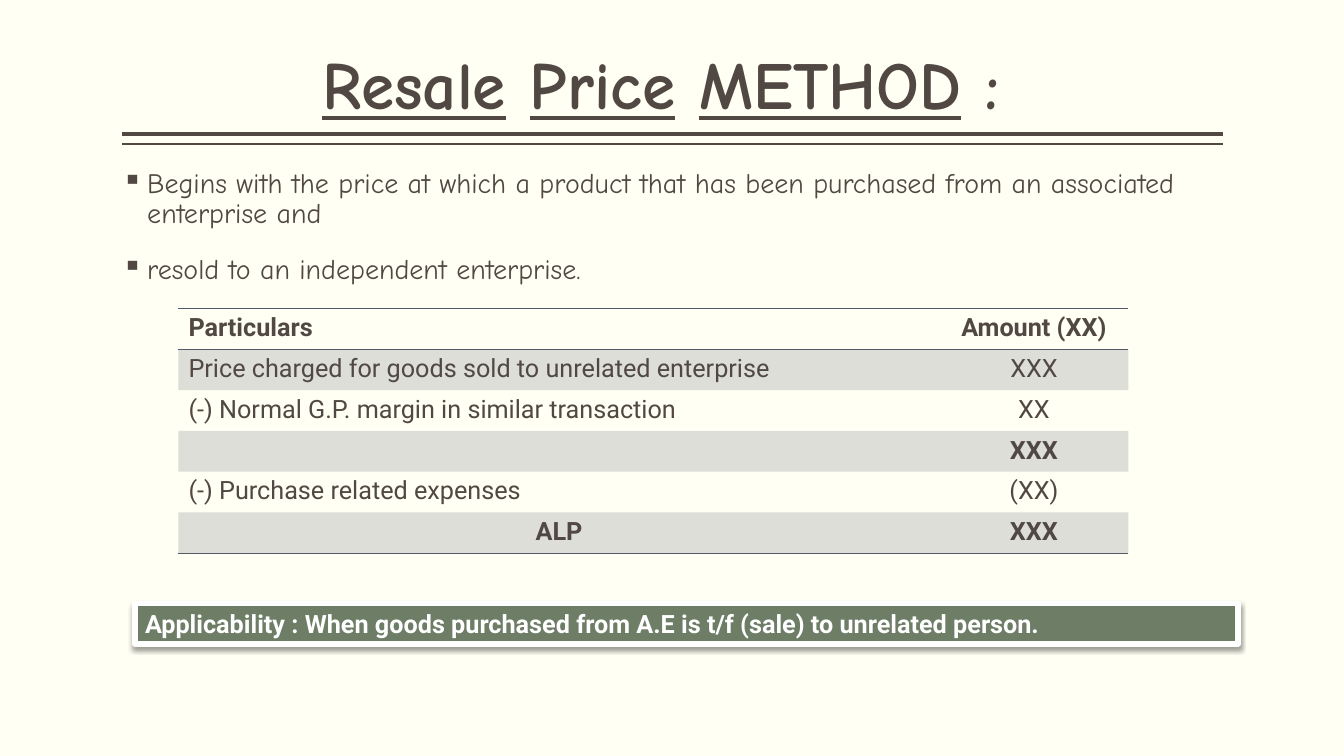
from dataclasses import dataclass

from lxml.etree import SubElement
from pptx import Presentation
from pptx.dml.color import RGBColor
from pptx.enum.shapes import MSO_CONNECTOR as Connector, MSO_SHAPE as Shape
from pptx.enum.text import MSO_ANCHOR as Anchor, MSO_AUTO_SIZE as AutoSize, PP_ALIGN as Align
from pptx.oxml.ns import qn
from pptx.util import Inches, Pt


@dataclass(frozen=True)
class Theme:
    paper: str = "FFFFF3"
    ink: str = "514843"
    slate: str = "525A6A"
    moss: str = "6D7D66"
    white: str = "FFFFFF"
    black: str = "000000"
    hand: str = "Comic Neue"
    sans: str = "Roboto"
    title_size: int = 48
    body_size: int = 20
    small_size: int = 18
    plain_table: str = "{2D5ABB26-0587-4C30-8999-92F81FD0307C}"


def rgb(code):
    return RGBColor.from_string(code)


def apply(target, formats):
    for key, value in formats.items():
        setattr(target, key, value)


def add_xml(parent, tag, **attributes):
    return SubElement(parent, qn(tag), {key: str(value) for key, value in attributes.items()})


class SlideBuilder:
    def __init__(self, theme):
        self.theme = theme
        self.deck = Presentation()
        apply(self.deck, {"slide_width": Inches(13.33), "slide_height": Inches(7.5)})
        self.slide = self.deck.slides.add_slide(self.deck.slide_layouts[6])
        self.slide.background.fill.solid()
        self.slide.background.fill.fore_color.rgb = rgb(theme.paper)

    def x(self, percent):
        return round(self.deck.slide_width * percent / 100)

    def y(self, percent):
        return round(self.deck.slide_height * percent / 100)

    def box(self, left, top, width, height):
        return self.x(left), self.y(top), self.x(width), self.y(height)

    def add_text(self, paragraph, text, font, size, color, **formats):
        run = paragraph.add_run()
        run.text = text
        apply(run.font, {"name": font, "size": Pt(size), **formats})
        run.font.color.rgb = rgb(color)

    def rule(self, left, right, level, weight):
        line = self.slide.shapes.add_connector(
            Connector.STRAIGHT, self.x(right), self.y(level), self.x(left), self.y(level))
        line.line.color.rgb = rgb(self.theme.ink)
        line.line.width = Pt(weight)
        add_xml(line._element.spPr, "a:effectLst")

    def text_frame(self, area, anchor):
        frame = self.slide.shapes.add_textbox(*self.box(*area)).text_frame
        apply(frame, {"word_wrap": True, "vertical_anchor": anchor,
                      "margin_left": 0, "margin_right": 0})
        return frame

    def title(self, area, pieces):
        paragraph = self.text_frame(area, Anchor.BOTTOM).paragraphs[0]
        apply(paragraph, {"alignment": Align.CENTER, "line_spacing": 0.9})
        for text, underlined in pieces:
            self.add_text(paragraph, text, self.theme.hand, self.theme.title_size,
                          self.theme.ink, bold=True, underline=underlined)

    def bullets(self, area, points):
        frame = self.text_frame(area, Anchor.TOP)
        for index, point in enumerate(points):
            paragraph = frame.add_paragraph() if index else frame.paragraphs[0]
            apply(paragraph, {"line_spacing": 0.9, "space_before": Pt(18)})
            properties = paragraph._p.get_or_add_pPr()
            properties.set("marL", str(Inches(0.25)))
            properties.set("indent", str(-Inches(0.25)))
            add_xml(properties, "a:buChar", char="▪")
            self.add_text(paragraph, point, self.theme.hand, self.theme.body_size,
                          self.theme.ink)

    def cell_border(self, cell, tag):
        border = add_xml(cell._tc.get_or_add_tcPr(), tag, w=Pt(1))
        add_xml(add_xml(border, "a:solidFill"), "a:srgbClr", val=self.theme.slate)

    def cell_fill(self, cell, shaded):
        if not shaded:
            cell.fill.background()
            return
        cell.fill.solid()
        cell.fill.fore_color.rgb = rgb(self.theme.slate)
        tint = cell._tc.tcPr.find(qn("a:solidFill")).find(qn("a:srgbClr"))
        add_xml(tint, "a:alpha", val=20000)

    def table(self, area, widths, entries):
        frame = self.slide.shapes.add_table(len(entries), len(widths), *self.box(*area))
        frame._element.find(".//" + qn("a:tableStyleId")).text = self.theme.plain_table
        table = frame.table
        for column, width in zip(table.columns, widths):
            column.width = self.x(width)
        last = len(entries) - 1
        for row, entry in enumerate(entries):
            for column, (text, bold, alignment) in enumerate(entry):
                cell = table.cell(row, column)
                self.cell_fill(cell, row % 2 == 1)
                fill = cell._tc.tcPr[0]
                if row == 0:
                    self.cell_border(cell, "a:lnT")
                if row in (0, last):
                    self.cell_border(cell, "a:lnB")
                cell._tc.tcPr.append(fill)
                paragraph = cell.text_frame.paragraphs[0]
                paragraph.alignment = alignment
                if text:
                    self.add_text(paragraph, text, self.theme.sans, self.theme.small_size,
                                  self.theme.ink, bold=bold)

    def banner(self, area, text):
        banner = self.slide.shapes.add_shape(Shape.RECTANGLE, *self.box(*area))
        banner.fill.solid()
        banner.fill.fore_color.rgb = rgb(self.theme.moss)
        banner.line.color.rgb = rgb(self.theme.white)
        banner.line.width = Pt(3.82)
        banner.shadow.inherit = False
        effects = banner._element.spPr.find(qn("a:effectLst"))
        shadow = add_xml(effects, "a:outerShdw", blurRad=Pt(3.5), dist=Pt(2),
                         dir=5400000, rotWithShape=0)
        add_xml(add_xml(shadow, "a:srgbClr", val=self.theme.black), "a:alpha", val=38000)
        apply(banner.text_frame, {"word_wrap": True, "vertical_anchor": Anchor.TOP,
                                  "auto_size": AutoSize.SHAPE_TO_FIT_TEXT})
        paragraph = banner.text_frame.paragraphs[0]
        paragraph.alignment = Align.LEFT
        self.add_text(paragraph, text, self.theme.sans, self.theme.small_size,
                      self.theme.white, bold=True)


def main():
    builder = SlideBuilder(Theme())
    for level, weight in ((17.73, 3), (19.07, 1)):
        builder.rule(9.08, 91, level, weight)
    builder.title((9.08, 1.07, 81.92, 16), [
        ("Resale", True), (" ", False), ("Price", True), (" ", False),
        ("METHOD", True), (" : ", False)])
    builder.bullets((9.08, 21.73, 81.92, 66.67), [
        "Begins with the price at which a product that has been purchased "
        "from an associated enterprise and",
        "resold to an independent enterprise."])
    left, center = Align.LEFT, Align.CENTER
    builder.table((13.28, 40.8, 70.67, 32.4), (56.64, 14.03), [
        [("Particulars", True, left), ("Amount (XX)", True, center)],
        [("Price charged for goods sold to unrelated enterprise", False, left),
         ("XXX", False, center)],
        [("(-) Normal G.P. margin in similar transaction", False, left), ("XX", False, center)],
        [("", False, left), ("XXX", True, center)],
        [("(-) Purchase related expenses", False, left), ("(XX)", False, center)],
        [("ALP", True, center), ("XXX", True, center)]])
    builder.banner((10.05, 79.87, 82.07, 5.33),
                   "Applicability : When goods purchased from A.E is t/f (sale) to unrelated person.")
    builder.deck.save("out.pptx")


if __name__ == "__main__":
    main()
